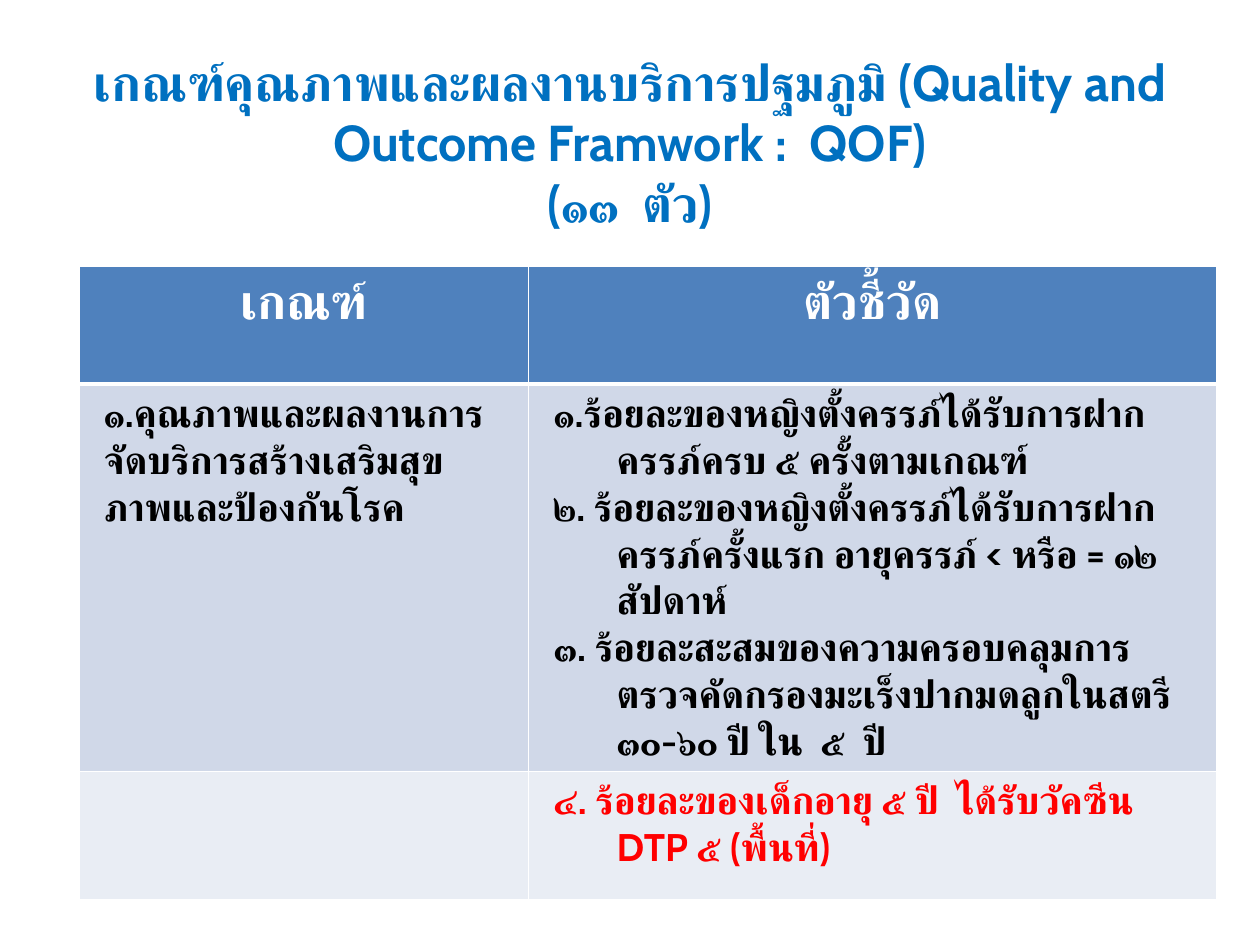
"""Build the slide on primary care quality criteria and indicators."""
from dataclasses import dataclass

from lxml import etree
from pptx import Presentation
from pptx.dml.color import RGBColor
from pptx.enum.lang import MSO_LANGUAGE_ID
from pptx.enum.text import MSO_ANCHOR, PP_ALIGN
from pptx.oxml.ns import qn
from pptx.util import Pt

CENTER, LEFT = PP_ALIGN.CENTER, PP_ALIGN.LEFT
MIDDLE, TOP = MSO_ANCHOR.MIDDLE, MSO_ANCHOR.TOP
THAI = MSO_LANGUAGE_ID.THAI


@dataclass(frozen=True)
class Theme:
    """Colours, typeface and type sizes of the slide."""
    font: str = "Cabin"
    title: str = "0070C0"
    header: str = "4F81BD"
    band: str = "D0D8E8"
    light_band: str = "E9EDF4"
    white: str = "FFFFFF"
    ink: str = "000000"
    alert: str = "FF0000"
    title_size: float = 28.8
    header_size: float = 28
    body_size: float = 22


def set_format(target, values):
    """Set each named attribute on the target."""
    for name, value in values.items():
        setattr(target, name, value)


class SlideBuilder:
    """Holds the theme and the current slide."""

    def __init__(self, slide, theme):
        """Keep the slide and its theme."""
        self.slide, self.theme = slide, theme

    def paragraphs(self, frame, wordings, size, color, align=LEFT, hanging=0):
        """Fill a text frame with bold paragraphs."""
        for number, wording in enumerate(wordings):
            paragraph = frame.add_paragraph() if number else frame.paragraphs[0]
            paragraph.text = wording
            paragraph.alignment = align
            if hanging:
                properties = paragraph._p.get_or_add_pPr()
                properties.set("marL", str(Pt(hanging)))
                properties.set("indent", str(-Pt(hanging)))
            for run in paragraph.runs:
                set_format(run.font, {"name": self.theme.font, "size": Pt(size),
                                      "bold": True, "language_id": THAI})
                run.font.color.rgb = RGBColor.from_string(color)
                complex_font = etree.SubElement(run.font._element, qn("a:cs"))
                complex_font.set("typeface", self.theme.font)

    def text(self, wording, left, top, width, height, size, color):
        """Add a centred text box."""
        frame = self.slide.shapes.add_textbox(
            Pt(left), Pt(top), Pt(width), Pt(height)).text_frame
        set_format(frame, {"word_wrap": True, "vertical_anchor": MIDDLE})
        self.paragraphs(frame, [wording], size, color, CENTER)

    def border(self, cell, widths):
        """Draw white cell borders of the given widths."""
        properties = cell._tc.get_or_add_tcPr()
        for place, (side, width) in enumerate(widths.items()):
            line = etree.Element(qn(f"a:ln{side}"), w=str(Pt(width)))
            fill = etree.SubElement(line, qn("a:solidFill"))
            etree.SubElement(fill, qn("a:srgbClr"), val=self.theme.white)
            properties.insert(place, line)

    def table(self, rows, left, top, widths, heights):
        """Add a table from rows of fill, text format and cell paragraphs."""
        table = self.slide.shapes.add_table(
            len(rows), len(widths), Pt(left), Pt(top),
            Pt(sum(widths)), Pt(sum(heights))).table
        for column, width in zip(table.columns, widths):
            column.width = Pt(width)
        for index, (fill, style, contents) in enumerate(rows):
            table.rows[index].height = Pt(heights[index])
            for column, wordings in enumerate(contents):
                cell = table.cell(index, column)
                set_format(cell, {"margin_left": Pt(14.4), "margin_right": Pt(14.4),
                                  "margin_top": Pt(3.6), "margin_bottom": Pt(3.6),
                                  "vertical_anchor": TOP})
                cell.fill.solid()
                cell.fill.fore_color.rgb = RGBColor.from_string(fill)
                self.border(cell, {"L": 1, "R": 1, "T": 3 if index == 1 else 1,
                                   "B": 3 if index == 0 else 1})
                hanging = 36 if index and column else 0
                self.paragraphs(cell.text_frame, wordings, hanging=hanging, **style)


def main():
    """Build and save the slide."""
    presentation = Presentation()
    set_format(presentation, {"slide_width": Pt(720), "slide_height": Pt(540)})
    theme = Theme()
    builder = SlideBuilder(
        presentation.slides.add_slide(presentation.slide_layouts[6]), theme)

    heading = {"size": theme.header_size, "color": theme.white, "align": CENTER}
    body = {"size": theme.body_size, "color": theme.ink}
    criteria_rows = [
        (theme.header, heading, [["เกณฑ์"], ["ตัวชี้วัด"]]),
        (theme.band, body, [
            ["๑.คุณภาพและผลงานการจัดบริการสร้างเสริมสุขภาพและป้องกันโรค"],
            ["๑.ร้อยละของหญิงตั้งครรภ์ได้รับการฝากครรภ์ครบ ๕ ครั้งตามเกณฑ์",
             "๒. ร้อยละของหญิงตั้งครรภ์ได้รับการฝากครรภ์ครั้งแรก "
             "อายุครรภ์ < หรือ = ๑๒ สัปดาห์",
             "๓. ร้อยละสะสมของความครอบคลุมการตรวจคัดกรองมะเร็งปากมดลูกในสตรี "
             "๓๐-๖๐ ปี ใน  ๕  ปี"]]),
        (theme.light_band, {**body, "color": theme.alert}, [
            [], ["๔. ร้อยละของเด็กอายุ ๕ ปี  ได้รับวัคซีน DTP ๕ (พื้นที่)"]]),
    ]
    builder.table(criteria_rows, 45, 152, [257, 393], [67.5, 206, 73.5])
    builder.text("เกณฑ์คุณภาพและผลงานบริการปฐมภูมิ "
                 "(Quality and Outcome Framwork :  QOF)\v(๑๓  ตัว)",
                 36, 21.6, 648, 118.8, theme.title_size, theme.title)
    presentation.save("out.pptx")


if __name__ == "__main__":
    main()
